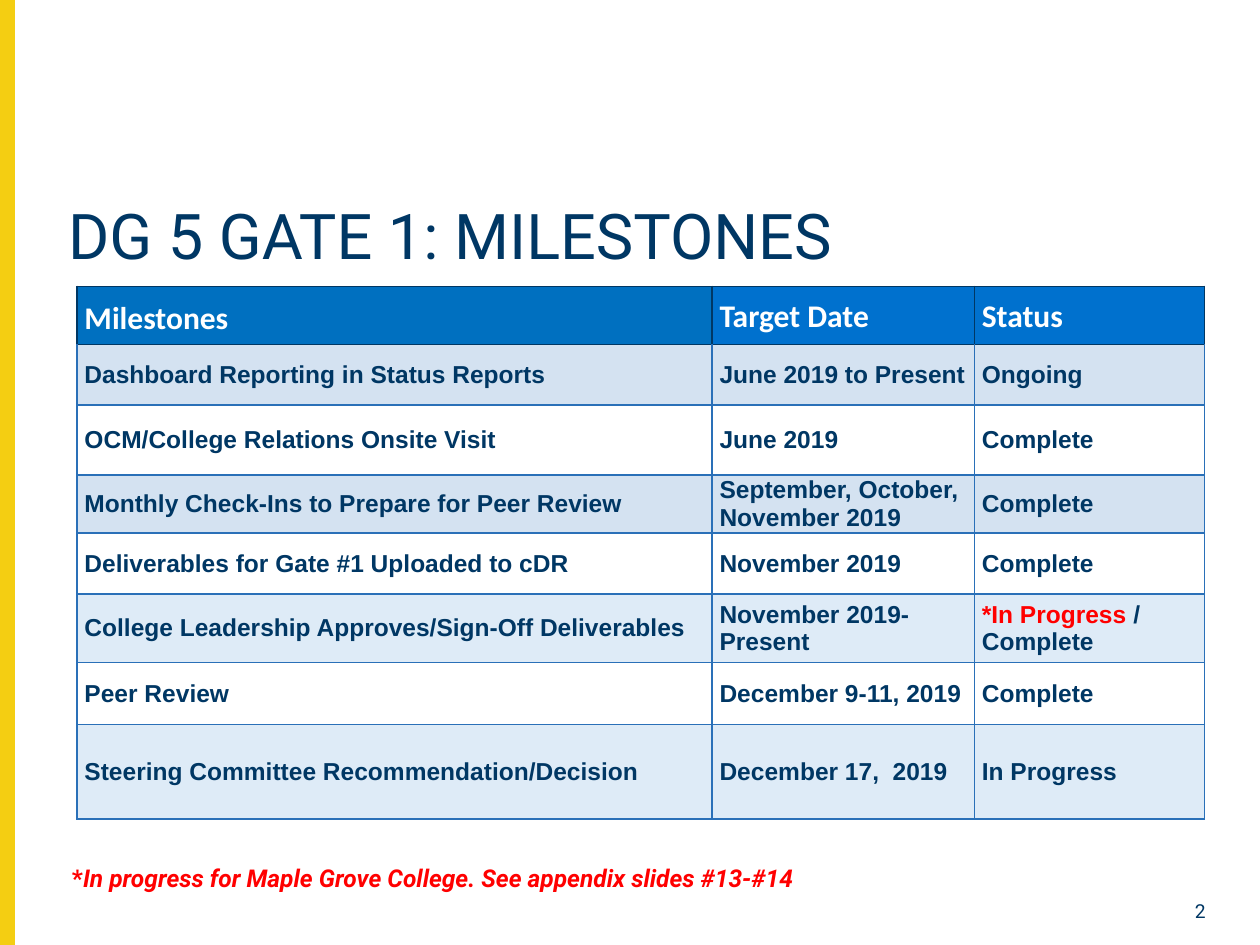
import pptx
import pptx.util
import pptx.dml.color
import pptx.enum.shapes
import pptx.enum.text
import pptx.oxml
import pptx.oxml.ns

Pt = pptx.util.Pt
RGBColor = pptx.dml.color.RGBColor
ANCHOR = pptx.enum.text.MSO_ANCHOR
ALIGN = pptx.enum.text.PP_ALIGN

NAVY = RGBColor(0x00, 0x37, 0x64)
YELLOW = RGBColor(0xF4, 0xCE, 0x12)
RED = RGBColor(0xFF, 0x00, 0x00)
WHITE = RGBColor(0xFF, 0xFF, 0xFF)
GRID = RGBColor(0x2A, 0x70, 0xB8)
HEADER_FIRST = RGBColor(0x00, 0x70, 0xC0)
HEADER = RGBColor(0x00, 0x71, 0xCE)
BAND = RGBColor(0xD4, 0xE2, 0xF1)
PALE = RGBColor(0xDE, 0xEB, 0xF7)

HEADER_LINE = (NAVY, 0.75)
BODY_LINE = (GRID, 1)
COLUMNS = [362.9, 149.9, 131.6]
HEADINGS = ["Milestones", "Target Date", "Status"]
HEADER_HEIGHT = 33.5
MILESTONES = [
    (34.5, BAND, "Dashboard Reporting in Status Reports", "June 2019 to Present", "Ongoing"),
    (40, None, "OCM/College Relations Onsite Visit", "June 2019", "Complete"),
    (33.2, BAND, "Monthly Check-Ins to Prepare for Peer Review",
     "September, October, November 2019", "Complete"),
    (34.8, None, "Deliverables for Gate #1 Uploaded to cDR", "November 2019", "Complete"),
    (39.2, PALE, "College Leadership Approves/Sign-Off Deliverables",
     "November 2019-Present", "*In Progress / Complete"),
    (35.4, None, "Peer Review", "December 9-11, 2019", "Complete"),
    (54, PALE, "Steering Committee Recommendation/Decision", "December 17,  2019", "In Progress"),
]


def set_font(p, name, size, color, bold=False):
    p.font.name = name
    p.font.size = Pt(size)
    p.font.color.rgb = color
    p.font.bold = bold


def add_text(slide, box, text):
    tf = slide.shapes.add_textbox(*map(Pt, box)).text_frame
    tf.word_wrap = True
    p = tf.paragraphs[0]
    p.text = text
    return p


def format_cell(cell, fill, line, top_line):
    cell.margin_left, cell.margin_right = Pt(4.3), Pt(4)
    cell.margin_top = cell.margin_bottom = 0
    cell.vertical_anchor = ANCHOR.MIDDLE
    if fill is None:
        cell.fill.background()
    else:
        cell.fill.solid()
        cell.fill.fore_color.rgb = fill
    tcPr = cell._tc.get_or_add_tcPr()
    for i, side in enumerate("LRTB"):
        color, width = top_line if side == "T" else line
        tcPr.insert(i, pptx.oxml.parse_xml(
            f'<a:ln{side} {pptx.oxml.ns.nsdecls("a")} w="{Pt(width)}">'
            f'<a:solidFill><a:srgbClr val="{color}"/></a:solidFill></a:ln{side}>'))


def fill_status(p, text):
    if not text.startswith("*"):
        p.text = text
        return
    pending, slash, done = text.partition("/ ")
    r = p.add_run()
    r.text = pending
    r.font.color.rgb = RED
    p.add_run().text = slash + done


def add_side_bar(slide, box):
    sp = slide.shapes.add_shape(pptx.enum.shapes.MSO_SHAPE.RECTANGLE, *map(Pt, box))
    sp.shadow.inherit = False
    sp.fill.solid()
    sp.fill.fore_color.rgb = YELLOW
    sp.line.color.rgb = YELLOW
    sp.line.width = Pt(1)


def add_title(slide, box):
    title = slide.shapes.title
    title.left, title.top, title.width, title.height = map(Pt, box)
    tf = title.text_frame
    tf.vertical_anchor = ANCHOR.TOP
    tf.auto_size = pptx.enum.text.MSO_AUTO_SIZE.NONE
    p = tf.paragraphs[0]
    p.text = "DG 5 GATE 1: MILESTONES"
    p.alignment = ALIGN.LEFT
    p.line_spacing = 0.9
    set_font(p, "Roboto", 36, NAVY)


def add_milestones(slide, box):
    rows = len(MILESTONES) + 1
    table = slide.shapes.add_table(rows, len(COLUMNS), *map(Pt, box)).table
    table.first_row = table.horz_banding = False
    for column, width in zip(table.columns, COLUMNS):
        column.width = Pt(width)
    table.rows[0].height = Pt(HEADER_HEIGHT)
    for c, heading in enumerate(HEADINGS):
        cell = table.cell(0, c)
        format_cell(cell, HEADER if c else HEADER_FIRST, HEADER_LINE, HEADER_LINE)
        p = cell.text_frame.paragraphs[0]
        p.text = heading
        p.line_spacing = 1.07 if c else 1.15
        set_font(p, "Calibri", 18, WHITE, bold=True)
    for i, (height, fill, *texts) in enumerate(MILESTONES, 1):
        table.rows[i].height = Pt(height)
        for c, text in enumerate(texts):
            cell = table.cell(i, c)
            format_cell(cell, fill, BODY_LINE, HEADER_LINE if i == 1 else BODY_LINE)
            p = cell.text_frame.paragraphs[0]
            set_font(p, "Arial", 14, NAVY, bold=True)
            fill_status(p, text)


def add_footnote(slide, box):
    p = add_text(slide, box, "*")
    set_font(p, "Roboto", 14, RED, bold=True)
    r = p.add_run()
    r.text = "In progress for Maple Grove College. See appendix slides #13-#14"
    r.font.italic = True


def add_page_number(slide, box):
    p = add_text(slide, box, "2")
    p.alignment = ALIGN.RIGHT
    set_font(p, "Roboto", 11, NAVY)


def main():
    prs = pptx.Presentation()
    prs.slide_width, prs.slide_height = Pt(720), Pt(540)
    slide = prs.slides.add_slide(prs.slide_layouts[5])
    add_side_bar(slide, (0, 0, 8, 540))
    add_milestones(slide, (44, 163.5, 644.4, 304.6))
    add_title(slide, (31.7, 113.7, 656, 46))
    add_footnote(slide, (34, 489.6, 644, 24.5))
    add_page_number(slide, (659, 510.5, 37, 19))
    prs.save("out.pptx")


if __name__ == "__main__":
    main()
